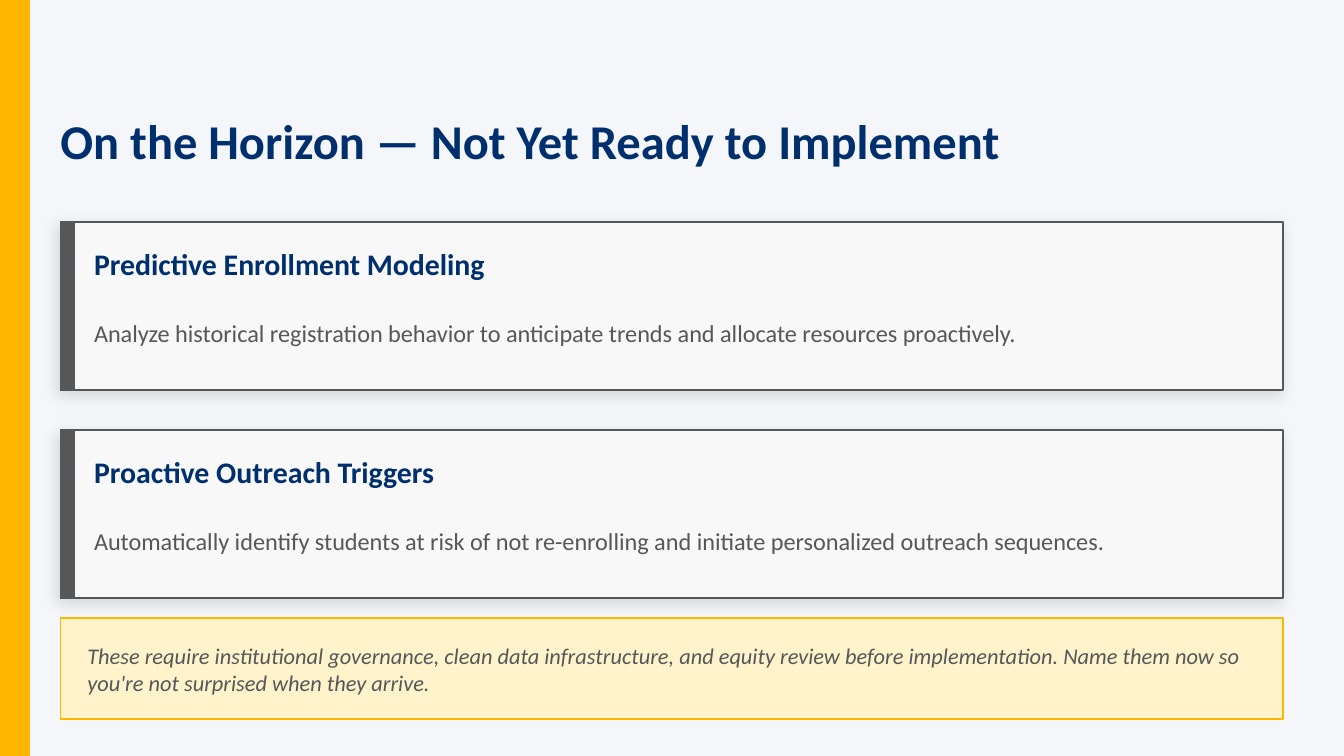
from lxml import etree
from pptx import Presentation
from pptx.dml.color import RGBColor
from pptx.enum import shapes, text
from pptx.oxml import ns
from pptx.util import Pt

PX = 4572  # EMU per px, 200 px to the inch
WIDE, HIGH = 2000, 1125
LEFT, SPAN = 90, 1820
FONT = "Calibri"
HUES = {
    "back": "F4F6F9",
    "gold": "FFB600",
    "cream": "FFF3CC",
    "navy": "002F6D",
    "gray": "555759",
    "card": "F8F8F8",
    "black": "000000",
}
CARDS = [
    ("Predictive Enrollment Modeling",
     "Analyze historical registration behavior to anticipate trends "
     "and allocate resources proactively."),
    ("Proactive Outreach Triggers",
     "Automatically identify students at risk of not re-enrolling "
     "and initiate personalized outreach sequences."),
]
NOTE = ("These require institutional governance, clean data infrastructure, "
        "and equity review before implementation. Name them now so you're not "
        "surprised when they arrive.")


def hue(name):
    return RGBColor.from_string(HUES[name])


def scale(*box):
    return [n * PX for n in box]


def add_box(slide, box, fill, line):
    shape = slide.shapes.add_shape(shapes.MSO_SHAPE.RECTANGLE, *scale(*box))
    shape.shadow.inherit = False
    shape.fill.solid()
    shape.fill.fore_color.rgb = hue(fill)
    shape.line.color.rgb = hue(line)
    shape.line.width = Pt(1)
    return shape


def add_shade(shape):
    """Give the shape a soft shadow to the lower left."""
    effects = shape.element.spPr.find(ns.qn("a:effectLst"))
    shade = etree.SubElement(
        effects, ns.qn("a:outerShdw"), blurRad=str(Pt(8)), dist=str(Pt(3)),
        dir=str(135 * 60000), algn="bl", rotWithShape="0")
    color = etree.SubElement(shade, ns.qn("a:srgbClr"), val=HUES["black"])
    etree.SubElement(color, ns.qn("a:alpha"), val="12000")


def add_text(slide, box, words, size, color, bold=False, italic=False):
    frame = slide.shapes.add_textbox(*scale(*box)).text_frame
    frame.word_wrap = True
    frame.vertical_anchor = text.MSO_ANCHOR.MIDDLE
    frame.margin_left = frame.margin_right = 0
    frame.margin_top = frame.margin_bottom = 0
    para = frame.paragraphs[0]
    para.text = words
    font = para.font
    font.name, font.size = FONT, Pt(size)
    font.bold, font.italic = bold, italic
    font.color.rgb = hue(color)


def add_card(slide, top, head, body):
    add_shade(add_box(slide, (LEFT, top, SPAN, 250), "card", "gray"))
    add_box(slide, (LEFT, top, 20, 250), "gray", "gray")
    add_text(slide, (140, top + 20, 1740, 84), head, 16, "navy", bold=True)
    add_text(slide, (140, top + 110, 1740, 110), body, 13, "gray")


def main():
    deck = Presentation()
    deck.slide_width, deck.slide_height = scale(WIDE, HIGH)
    slide = deck.slides.add_slide(deck.slide_layouts[6])
    slide.background.fill.solid()
    slide.background.fill.fore_color.rgb = hue("back")

    # Side bar and title
    add_box(slide, (0, 0, 44, HIGH), "gold", "gold")
    add_text(slide, (LEFT, 144, 1800, 130),
             "On the Horizon — Not Yet Ready to Implement",
             26, "navy", bold=True)

    # Cards
    for i, (head, body) in enumerate(CARDS):
        add_card(slide, 330 + 310 * i, head, body)

    # Closing note
    add_box(slide, (LEFT, 920, SPAN, 150), "cream", "gold")
    add_text(slide, (130, 930, 1740, 130), NOTE, 12, "gray", italic=True)

    deck.save("out.pptx")


if __name__ == "__main__":
    main()
